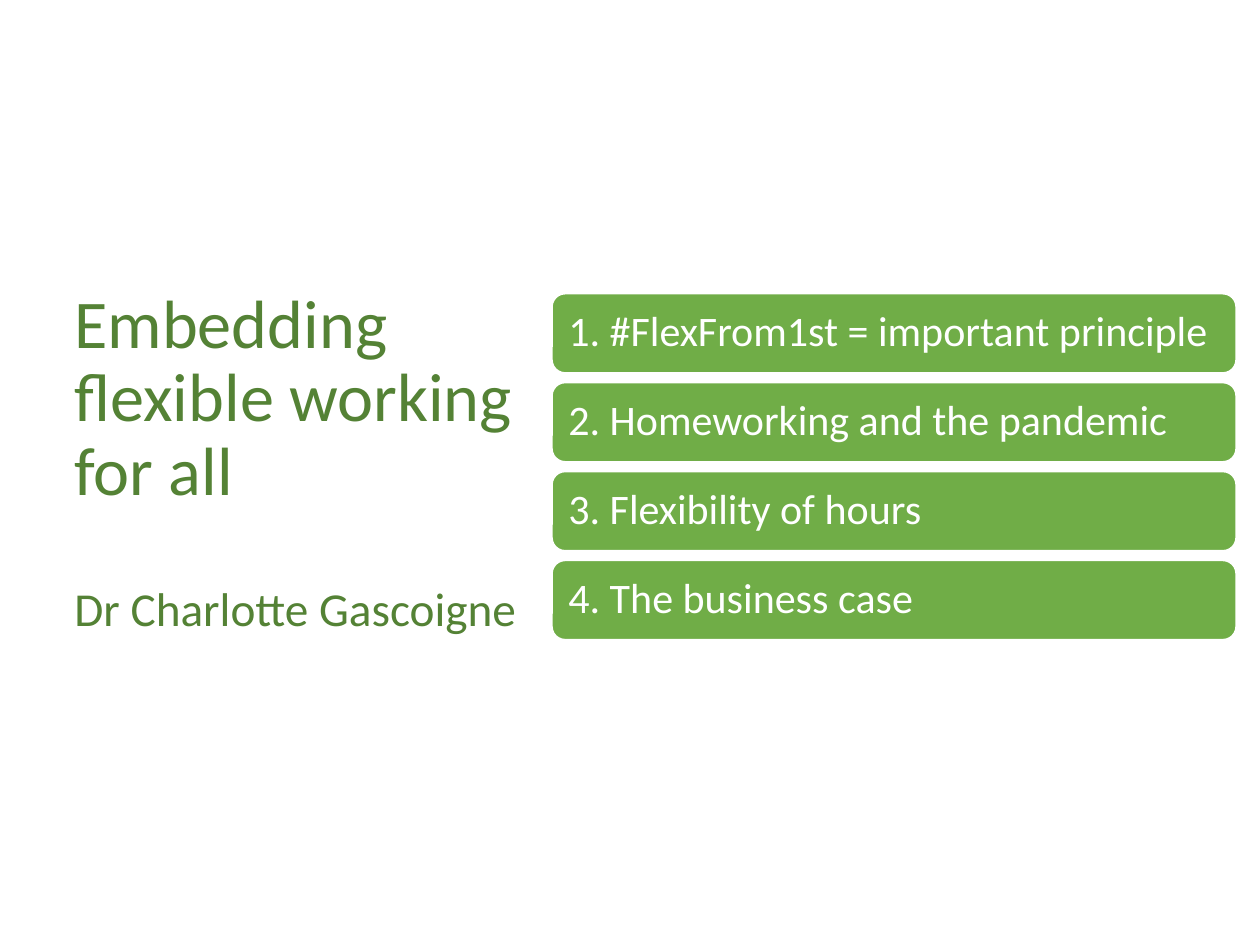
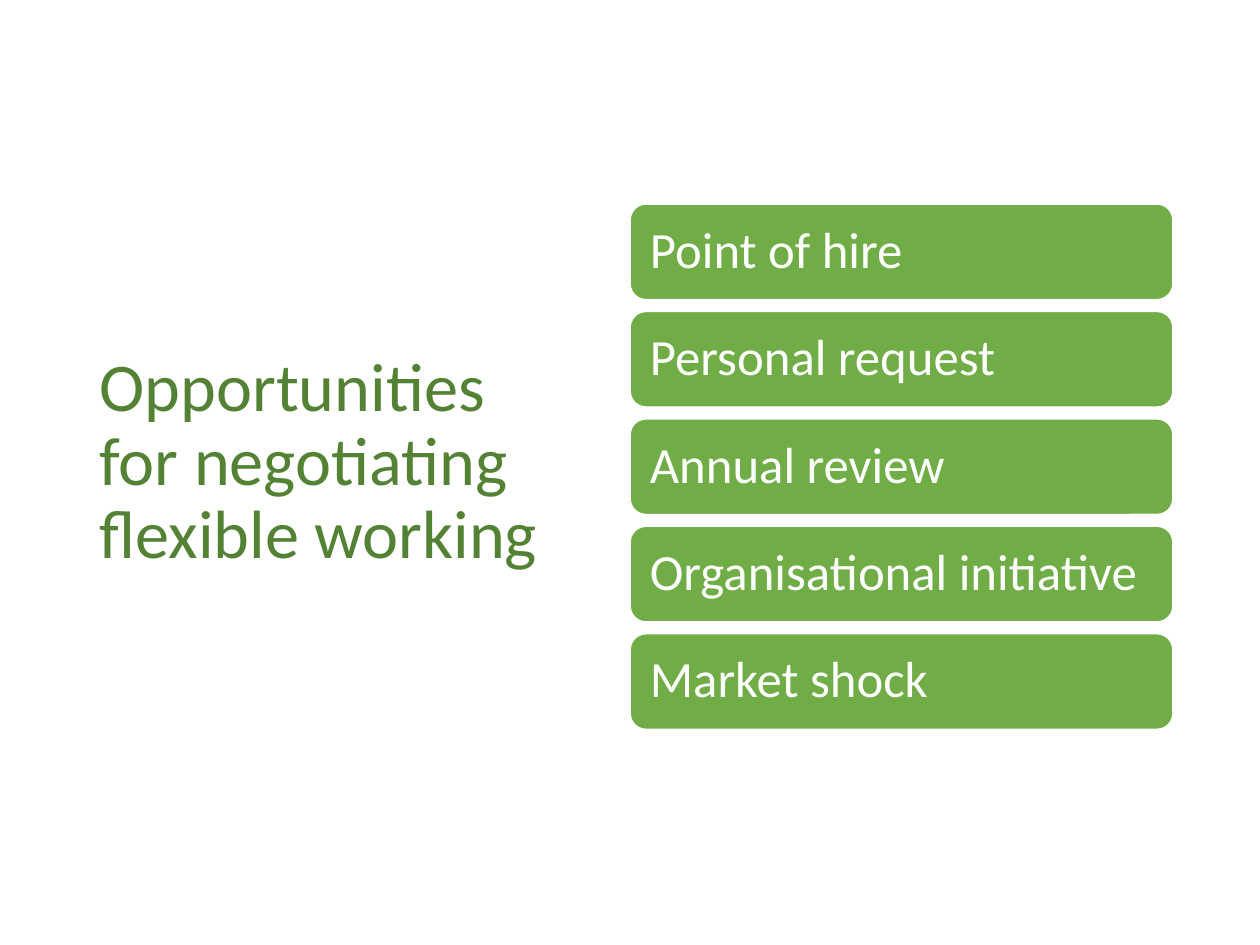
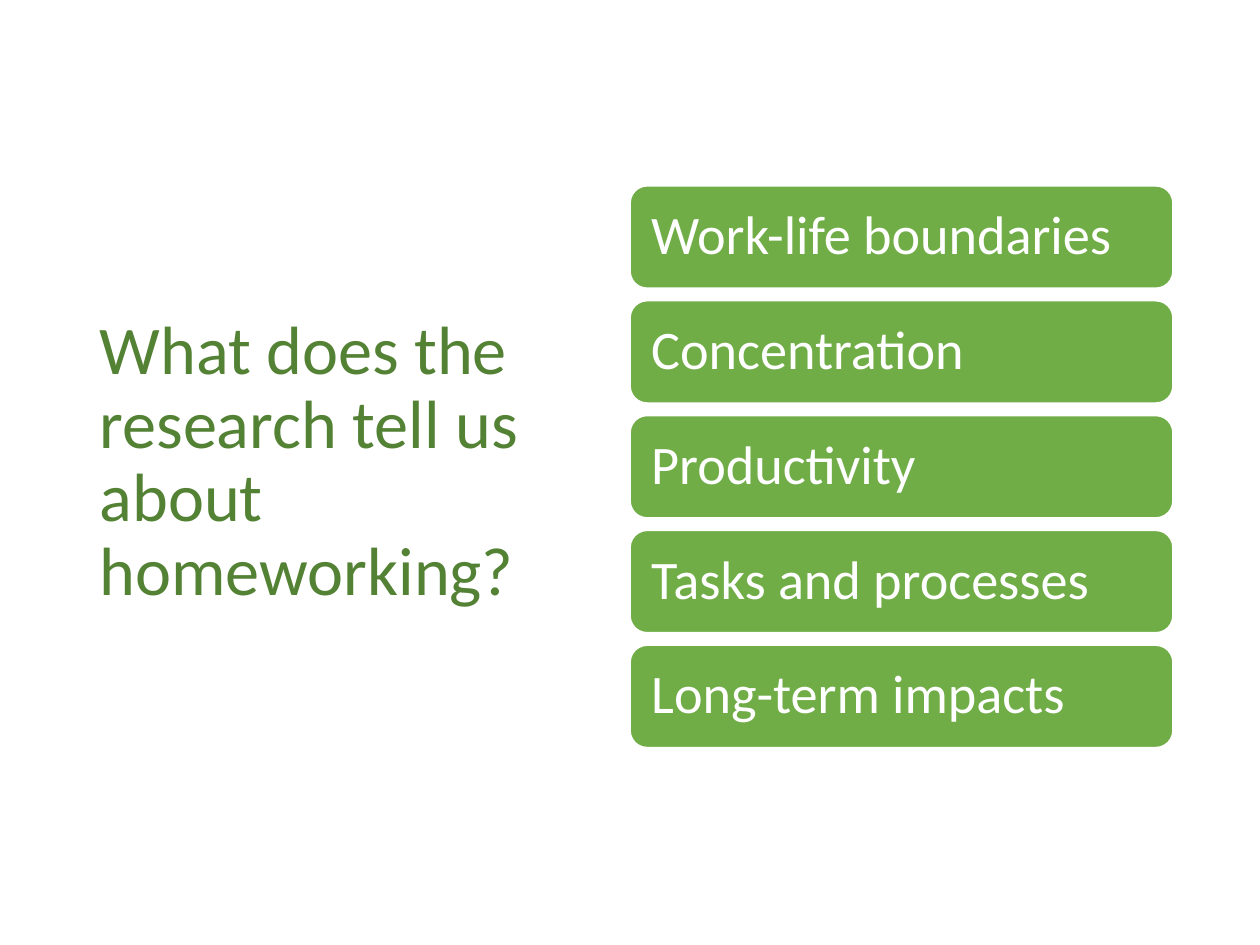
from pptx import Presentation
from pptx.dml.color import RGBColor
from pptx.enum.shapes import MSO_SHAPE
from pptx.enum.text import MSO_ANCHOR, MSO_AUTO_SIZE, PP_ALIGN
from pptx.util import Pt

# Content: heading lines are (text, size, space before)
SLIDES = [
    {
        "heading": [("Embedding flexible working for all", 39, 0),
                    ("Dr Charlotte Gascoigne", 27, 43)],
        "heading_left": 35.3,
        "topics": ["1. #FlexFrom1st = important principle",
                   "2. Homeworking and the pandemic",
                   "3. Flexibility of hours",
                   "4. The business case"],
        "topic_size": 24, "topics_left": 315.4, "topics_width": 391,
    },
    {
        "heading": [("Opportunities for negotiating flexible working", 39, 0)],
        "heading_left": 49.7,
        "topics": ["Point of hire", "Personal request", "Annual review",
                   "Organisational initiative", "Market shock"],
        "topic_size": 29, "topics_left": 360, "topics_width": 310.3,
    },
    {
        "heading": [("What does the research tell us about homeworking?", 39, 0)],
        "heading_left": 49.7,
        "topics": ["Work-life boundaries", "Concentration", "Productivity",
                   "Tasks and processes", "Long-term impacts"],
        "topic_size": 31, "topics_left": 360, "topics_width": 310.3,
    },
]

# Shared style
FONT = "Calibri"
DARK_GREEN, GREEN, WHITE = "548235", "70AD47", "FFFFFF"
HEADING_TOP, HEADING_WIDTH, HEADING_HEIGHT = 100, 285, 329
STACK_MIDDLE = 266.7
# Bar height and inset follow the text size; the gap follows the bar height
HEIGHT_RATIO, INSET_RATIO, GAP_RATIO = 1.89, 0.3, 0.12


def color(hex_value):
    return RGBColor.from_string(hex_value)


def style_paragraph(paragraph, size, hex_value):
    paragraph.alignment = PP_ALIGN.LEFT
    paragraph.line_spacing = 0.9
    paragraph.font.name = FONT
    paragraph.font.size = Pt(size)
    paragraph.font.color.rgb = color(hex_value)


def add_heading(slide, lines, left):
    heading = slide.shapes.title
    heading.left, heading.top = Pt(left), Pt(HEADING_TOP)
    heading.width, heading.height = Pt(HEADING_WIDTH), Pt(HEADING_HEIGHT)
    frame = heading.text_frame
    frame.text = "\n".join(text for text, _, _ in lines)
    frame.word_wrap = True
    frame.auto_size = MSO_AUTO_SIZE.NONE
    frame.vertical_anchor = MSO_ANCHOR.MIDDLE
    for paragraph, (_, size, space_before) in zip(frame.paragraphs, lines):
        style_paragraph(paragraph, size, DARK_GREEN)
        paragraph.space_before = Pt(space_before)


def add_topic(slide, text, size, left, top, width, height):
    topic = slide.shapes.add_shape(MSO_SHAPE.ROUNDED_RECTANGLE,
                                   Pt(left), Pt(top), Pt(width), Pt(height))
    topic.shadow.inherit = False
    topic.fill.solid()
    topic.fill.fore_color.rgb = color(GREEN)
    topic.line.color.rgb = color(WHITE)
    topic.line.width = Pt(1)
    frame = topic.text_frame
    frame.text = text
    frame.word_wrap = True
    frame.vertical_anchor = MSO_ANCHOR.MIDDLE
    inset = Pt(size * INSET_RATIO)
    frame.margin_left = frame.margin_right = inset
    frame.margin_top = frame.margin_bottom = inset
    style_paragraph(frame.paragraphs[0], size, WHITE)


def add_topics(slide, topics, size, left, width):
    """Stack the topics evenly around the shared middle line."""
    height = size * HEIGHT_RATIO
    gap = height * GAP_RATIO
    stack_height = len(topics) * (height + gap) - gap
    stack_top = STACK_MIDDLE - stack_height / 2
    for row, text in enumerate(topics):
        add_topic(slide, text, size, left, stack_top + row * (height + gap),
                  width, height)


def main():
    deck = Presentation()
    deck.slide_width, deck.slide_height = Pt(720), Pt(540)
    title_only = deck.slide_layouts.get_by_name("Title Only")
    for content in SLIDES:
        slide = deck.slides.add_slide(title_only)
        add_heading(slide, content["heading"], content["heading_left"])
        add_topics(slide, content["topics"], content["topic_size"],
                   content["topics_left"], content["topics_width"])
    deck.save("out.pptx")


if __name__ == "__main__":
    main()
